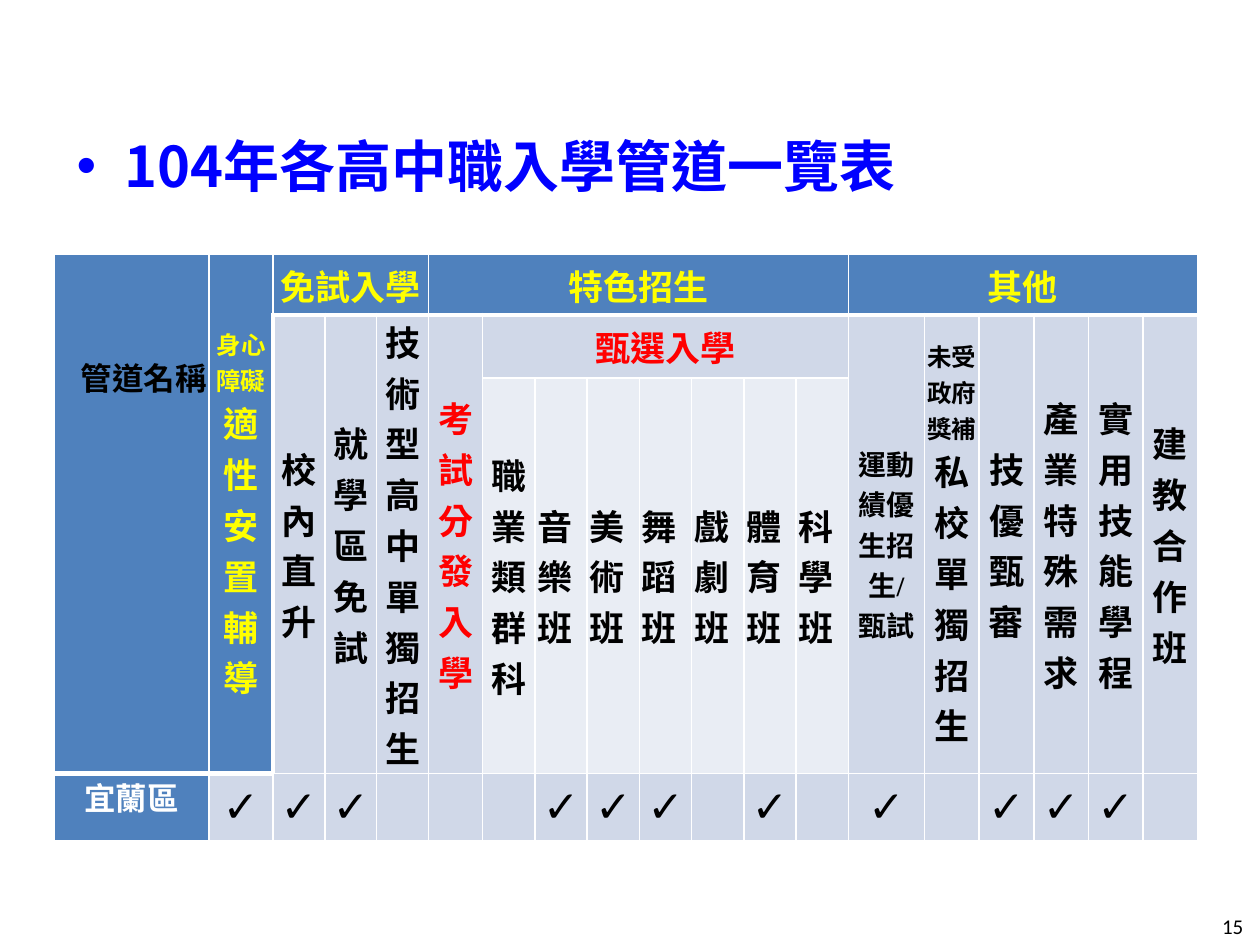
from dataclasses import dataclass

from lxml.etree import SubElement
from pptx import Presentation
from pptx.dml.color import RGBColor
from pptx.enum.text import MSO_ANCHOR, PP_ALIGN
from pptx.oxml.ns import qn
from pptx.util import Emu, Inches, Pt


@dataclass(frozen=True)
class Theme:
    header: str = "4F81BD"
    band: str = "D0D8E8"
    pale: str = "E9EDF4"
    white: str = "FFFFFF"
    black: str = "000000"
    yellow: str = "FFFF00"
    red: str = "FF0000"
    blue: str = "0000FF"
    sans: str = "Calibri"
    serif: str = "Times New Roman"
    cjk: str = "Noto Sans CJK SC"
    title: int = 32
    tick: int = 25
    large: int = 20
    medium: int = 18
    small: int = 16
    note: int = 14
    number: int = 12
    thin: int = 1
    thick: int = 3


THEME = Theme()


@dataclass(frozen=True)
class Box:
    """Place and size in percent of the slide."""
    left: float
    top: float
    width: float
    height: float


@dataclass(frozen=True)
class Line:
    text: str
    size: int = THEME.large
    latin: str = THEME.sans


@dataclass(frozen=True)
class Entry:
    row: int
    col: int
    lines: tuple
    color: str = THEME.black
    fill: str = THEME.band
    rows: int = 1
    cols: int = 1
    align: PP_ALIGN = PP_ALIGN.CENTER
    spacing: int | None = None
    top_margin: float = 0
    thick: str = ""


TITLE_BOX = Box(5.1, 13.3, 90, 79.2)
TABLE_BOX = Box(4.3, 26.93, 90.8, 62.1)
NUMBER_BOX = Box(96, 96, 5.1, 4)
COLUMN_SHARES = [123, 50.7] + [41.2] * 3 + [43] + [41.5] * 7 + [60.5] + [43.4] * 5
ROW_SHARES = [0.48, 0.5, 3.14, 0.54]

TOP_ROW = [("免試入學", 2, 3), ("特色招生", 5, 8), ("其他", 13, 6)]
CHANNELS = {2: "校內直升", 3: "就學區免試", 4: "技術型高中單獨招生", 5: "考試分發入學",
            15: "技優甄審", 16: "產業特殊需求", 17: "實用技能學程", 18: "建教合作班"}
CLASSES = ["職業類群科", "音樂班", "美術班", "舞蹈班", "戲劇班", "體育班", "科學班"]
OFFERED = {1, 2, 3, 7, 8, 9, 11, 13, 15, 16, 17}


def add_text(paragraph, text: str, *, size: int, color: str, latin: str = THEME.sans,
             bold: bool = True) -> None:
    run = paragraph.add_run()
    run.text = text
    font = run.font
    font.size, font.bold, font.name = Pt(size), bold, latin
    font.color.rgb = RGBColor.from_string(color)
    properties = run._r.get_or_add_rPr()
    properties.set("lang", "zh-TW")
    SubElement(properties, qn("a:ea"), typeface=THEME.cjk)


def place(box: Box, slide_size: tuple) -> list:
    width, height = slide_size
    return [Emu(round(length * share / 100)) for length, share in
            zip((width, height, width, height), (box.left, box.top, box.width, box.height))]


def add_frame(slide, box: Box, slide_size: tuple):
    frame = slide.shapes.add_textbox(*place(box, slide_size)).text_frame
    frame.word_wrap = True
    return frame.paragraphs[0]


def add_borders(cell, thick: str) -> None:
    """Draw white sides; the sides named in thick (L, R, T, B) are heavier."""
    properties = cell._tc.get_or_add_tcPr()
    for side in "LRTB":
        weight = THEME.thick if side in thick else THEME.thin
        line = SubElement(properties, qn(f"a:ln{side}"), w=str(Pt(weight)))
        paint = SubElement(line, qn("a:solidFill"))
        SubElement(paint, qn("a:srgbClr"), val=THEME.white)


def fill_cell(table, entry: Entry) -> None:
    cell = table.cell(entry.row, entry.col)
    if entry.rows > 1 or entry.cols > 1:
        cell.merge(table.cell(entry.row + entry.rows - 1, entry.col + entry.cols - 1))
    add_borders(cell, entry.thick)
    cell.fill.solid()
    cell.fill.fore_color.rgb = RGBColor.from_string(entry.fill)
    cell.vertical_anchor = MSO_ANCHOR.TOP if entry.top_margin else MSO_ANCHOR.MIDDLE
    cell.margin_left = cell.margin_right = Inches(0.02)
    cell.margin_top, cell.margin_bottom = Inches(entry.top_margin), 0
    for index, runs in enumerate(entry.lines):
        frame = cell.text_frame
        paragraph = frame.add_paragraph() if index else frame.paragraphs[0]
        paragraph.alignment = entry.align
        if entry.spacing:
            paragraph.line_spacing = Pt(entry.spacing)
        for run in runs:
            add_text(paragraph, run.text, size=run.size, color=entry.color, latin=run.latin)


def single(text: str, size: int = THEME.large, latin: str = THEME.sans) -> tuple:
    """One paragraph with one run."""
    return ((Line(text, size, latin),),)


def build_entries() -> list[Entry]:
    t = THEME
    entries = [
        Entry(0, 0, single("管道名稱", t.medium, t.serif), fill=t.header, rows=3,
              align=PP_ALIGN.RIGHT, top_margin=0.79, thick="B"),
        Entry(0, 1, ((Line("身心障礙", t.note), Line("適性安置輔導")),), t.yellow,
              t.header, rows=3, thick="B"),
        Entry(1, 6, single("甄選入學"), t.red, cols=len(CLASSES), thick="T"),
        Entry(1, 13, single("運動績優生招生/", t.small, t.serif)
              + single("甄試", t.small, t.serif), rows=2, thick="T"),
        Entry(1, 14, single("未受政府獎補", t.note) + single("私校單獨招生"),
              rows=2, thick="T"),
        Entry(3, 0, single("宜蘭區", t.medium, t.serif), t.white, t.header,
              spacing=14, thick="T"),
    ]
    entries += [Entry(0, col, single(text), t.yellow, t.header, cols=span, thick="B")
                for text, col, span in TOP_ROW]
    entries += [Entry(1, col, single(text), t.red if col == 5 else t.black, rows=2,
                      thick="LT" if col == 2 else "T")
                for col, text in CHANNELS.items()]
    entries += [Entry(2, col, single(text), fill=t.pale,
                      align=PP_ALIGN.CENTER if col == 6 else PP_ALIGN.LEFT)
                for col, text in enumerate(CLASSES, start=6)]
    entries += [Entry(3, col, single("✓", t.tick) if col in OFFERED else (),
                      thick="T" if col == 1 else "")
                for col in range(1, len(COLUMN_SHARES))]
    return entries


def add_admissions_table(slide, slide_size: tuple) -> None:
    area = place(TABLE_BOX, slide_size)
    table = slide.shapes.add_table(len(ROW_SHARES), len(COLUMN_SHARES), *area).table
    table.horz_banding = table.first_row = False
    for column, share in zip(table.columns, COLUMN_SHARES):
        column.width = Emu(round(area[2] * share / sum(COLUMN_SHARES)))
    for row, share in zip(table.rows, ROW_SHARES):
        row.height = Emu(round(area[3] * share / sum(ROW_SHARES)))
    for entry in build_entries():
        fill_cell(table, entry)


def add_title(slide, slide_size: tuple) -> None:
    title = add_frame(slide, TITLE_BOX, slide_size)
    properties = title._p.get_or_add_pPr()
    properties.set("marL", str(Inches(0.38)))
    properties.set("indent", str(-Inches(0.38)))
    SubElement(properties, qn("a:buFont"), typeface="Arial")
    SubElement(properties, qn("a:buChar"), char="•")
    add_text(title, "104年各高中職入學管道一覽表", size=THEME.title, color=THEME.blue,
             latin=THEME.cjk)


def main() -> None:
    presentation = Presentation()
    presentation.slide_width, presentation.slide_height = Inches(10), Inches(7.5)
    slide_size = (presentation.slide_width, presentation.slide_height)
    slide = presentation.slides.add_slide(presentation.slide_layouts[6])
    add_title(slide, slide_size)
    add_admissions_table(slide, slide_size)
    add_text(add_frame(slide, NUMBER_BOX, slide_size), "15", size=THEME.number,
             color=THEME.black, bold=False)
    presentation.save("out.pptx")


if __name__ == "__main__":
    main()
